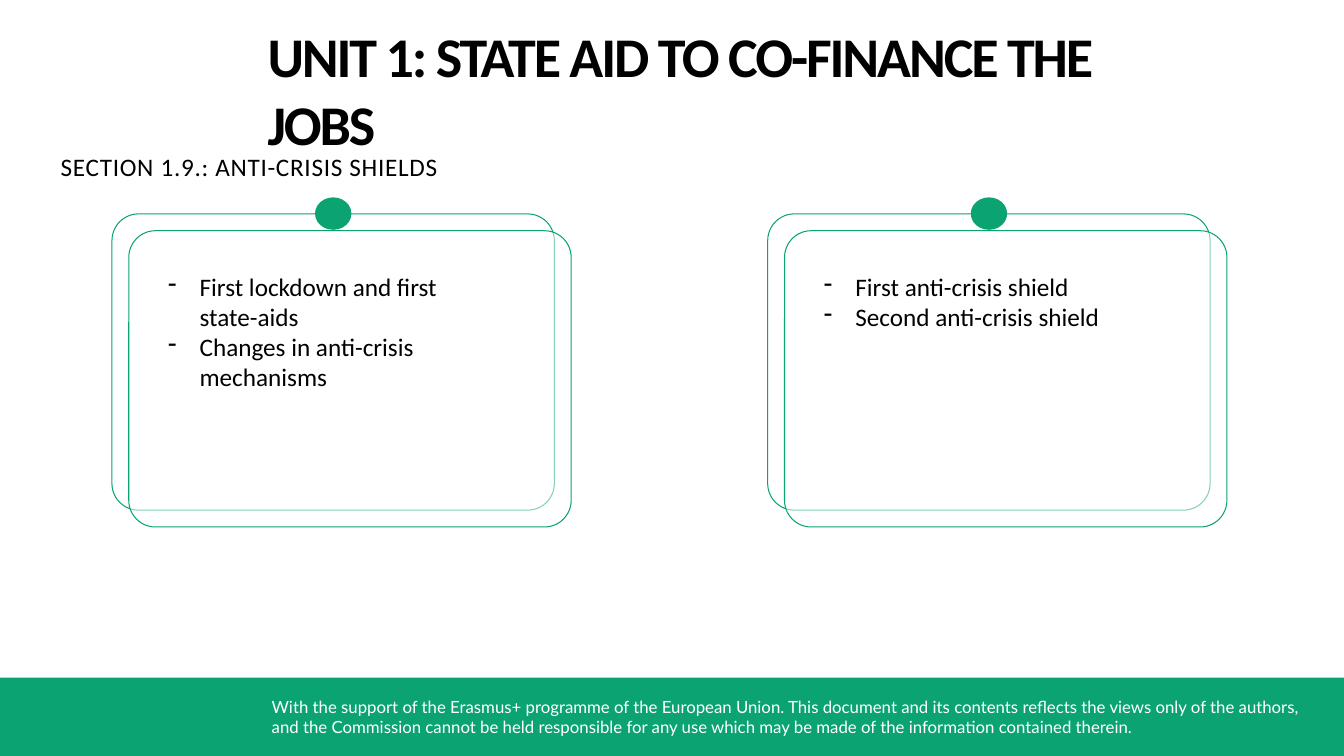
"""Build the anti-crisis shields slide with two outlined cards and a footer."""
import pptx
import pptx.dml.color
import pptx.enum.shapes
import pptx.enum.text
import pptx.oxml
import pptx.oxml.ns
import pptx.util

Pt = pptx.util.Pt
Preset = pptx.enum.shapes.MSO_SHAPE
qn = pptx.oxml.ns.qn


def rgb(code):
    return pptx.dml.color.RGBColor.from_string(code)


class SlideBuilder:
    green = "0CA373"
    white = "FFFFFF"
    body = {"name": "Calibri", "size": Pt(18), "bold": False}
    heading = {"name": "Calibri", "size": Pt(40), "bold": True}
    small = {"name": "Lato", "size": Pt(12), "bold": False}
    bullet_indent = Pt(22.5)

    def __init__(self, slide):
        self.slide = slide

    def shape(self, preset, box, fill, line=None, alpha=None):
        item = self.slide.shapes.add_shape(preset, *map(Pt, box))
        item.shadow.inherit = False
        item.fill.solid()
        item.fill.fore_color.rgb = rgb(fill)
        if alpha:
            color = item.fill._xPr.find(".//" + qn("a:srgbClr"))
            color.append(pptx.oxml.parse_xml(
                '<a:alpha xmlns:a="http://schemas.openxmlformats.org/drawingml/2006/main" '
                f'val="{alpha * 1000}"/>'))
        if line:
            item.line.color.rgb = rgb(line)
            item.line.width = Pt(0.75)
        else:
            item.line.fill.background()
        return item

    def text(self, box, lines, style, color="000000", spacing=0,
             bulleted=False, insets=(7.2, 3.6, 7.2, 3.6)):
        frame = self.slide.shapes.add_textbox(*map(Pt, box)).text_frame
        frame.word_wrap = True
        frame.auto_size = pptx.enum.text.MSO_AUTO_SIZE.SHAPE_TO_FIT_TEXT
        sides = ("margin_left", "margin_top", "margin_right", "margin_bottom")
        for side, inset in zip(sides, insets):
            setattr(frame, side, Pt(inset))
        for index, line in enumerate(lines):
            paragraph = frame.add_paragraph() if index else frame.paragraphs[0]
            if bulleted:
                properties = paragraph._p.get_or_add_pPr()
                properties.set("marL", str(self.bullet_indent))
                properties.set("indent", str(-self.bullet_indent))
                bullet = pptx.oxml.parse_xml(
                    '<a:buChar xmlns:a="http://schemas.openxmlformats.org/drawingml/2006/main" '
                    'char="-"/>')
                properties.append(bullet)
            run = paragraph.add_run()
            run.text = line
            for name, value in style.items():
                setattr(run.font, name, value)
            run.font.color.rgb = rgb(color)
            if spacing:
                run._r.get_or_add_rPr().set("spc", str(int(spacing * 100)))

    def card(self, left, topics):
        for offset in (0, 12):
            outline = self.shape(
                Preset.ROUNDED_RECTANGLE, (left + offset, 152.8 + offset, 316, 211.6),
                self.white, self.green, alpha=50)
            outline.adjustments[0] = 0.09
        self.shape(Preset.OVAL, (left + 145, 141, 26, 23.2), self.green)
        self.text((left + 33, 190, 250, 29 + 22 * len(topics)), topics,
                  self.body, bulleted=True)


def main():
    deck = pptx.Presentation()
    deck.slide_width, deck.slide_height = Pt(960), Pt(540)
    builder = SlideBuilder(deck.slides.add_slide(deck.slide_layouts[6]))

    builder.shape(Preset.RECTANGLE, (0, 484, 960, 56), builder.green)
    builder.text(
        (187, 494, 750, 36),
        ["With the support of the Erasmus+ programme of the European Union. "
         "This document and its contents reflects the views only of the authors, "
         "and the Commission cannot be held responsible for any use which may be "
         "made of the information contained therein."],
        builder.small, builder.white)

    cards = [
        ["First lockdown and first state-aids", "Changes in anti-crisis mechanisms"],
        ["First anti-crisis shield", "Second anti-crisis shield"],
    ]
    for column, topics in enumerate(cards):
        builder.card(80 + column * 468.4, topics)

    builder.text((190.4, 14, 646.6, 99), ["UNIT 1: STATE AID TO CO-FINANCE THE JOBS"],
                 builder.heading, spacing=-1.5, insets=(0.7, 1.7, 0, 0))
    builder.text((35.4, 104.5, 480, 29), ["SECTION 1.9.: ANTI-CRISIS SHIELDS"],
                 builder.body, spacing=0.5, insets=(7.9, 3.6, 7.2, 3.6))
    deck.save("out.pptx")


if __name__ == "__main__":
    main()
